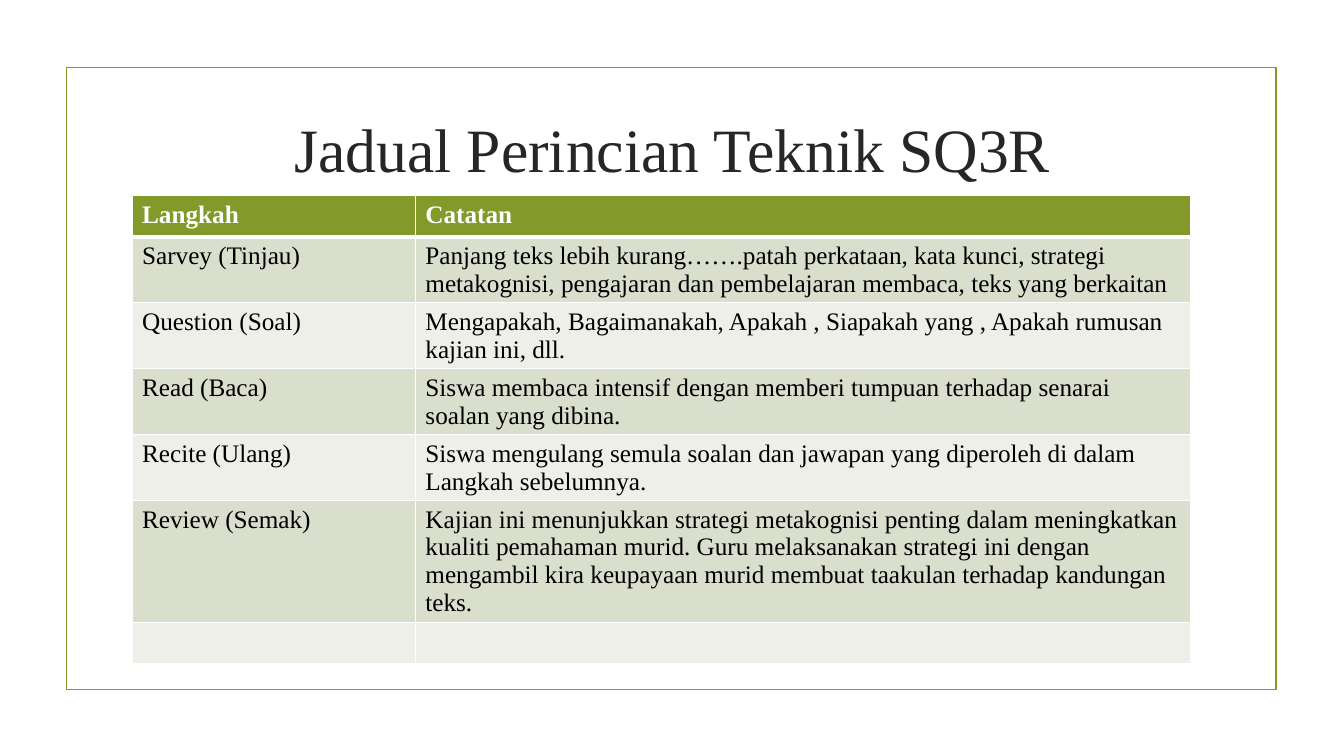
from dataclasses import dataclass

from lxml.etree import SubElement
from pptx import Presentation
from pptx.dml.color import RGBColor
from pptx.enum.shapes import MSO_SHAPE
from pptx.enum.text import MSO_ANCHOR, PP_ALIGN
from pptx.oxml import parse_xml
from pptx.oxml.ns import nsdecls, qn
from pptx.util import Pt


@dataclass(frozen=True)
class Theme:
    """Colours, type sizes and line widths of the slide."""

    font: str = "Times New Roman"
    green: str = "83992A"
    white: str = "FFFFFF"
    ink: str = "000000"
    head: str = "262626"
    bands: tuple = ("D9DECD", "EDEFE8")
    big: int = 44
    body: int = 18
    edge: float = 1.25
    thin: int = 1
    thick: int = 3


THEME = Theme()
SCALE = 9144
COLS = (281, 769)
ROW = 41
STEPS = (
    ("Langkah", "Catatan"),
    ("Sarvey (Tinjau)",
     "Panjang teks lebih kurang…….patah perkataan, kata kunci, strategi "
     "metakognisi, pengajaran dan pembelajaran membaca, teks yang berkaitan"),
    ("Question (Soal)",
     "Mengapakah, Bagaimanakah, Apakah , Siapakah yang , Apakah rumusan "
     "kajian ini, dll."),
    ("Read (Baca)",
     "Siswa membaca intensif dengan memberi tumpuan terhadap senarai "
     "soalan yang dibina."),
    ("Recite (Ulang)",
     "Siswa mengulang semula soalan dan jawapan yang diperoleh di dalam "
     "Langkah sebelumnya."),
    ("Review (Semak)",
     "Kajian ini menunjukkan strategi metakognisi penting dalam meningkatkan "
     "kualiti pemahaman murid. Guru melaksanakan strategi ini dengan "
     "mengambil kira keupayaan murid membuat taakulan terhadap kandungan "
     "teks."),
    ("", ""),
)


def px(*sizes):
    """Turn px lengths into EMU."""
    return [size * SCALE for size in sizes]


def add_run(para, text, size, color, bold=False):
    """Add one formatted run to a paragraph."""
    run = para.add_run()
    run.text = text
    font = run.font
    font.name, font.size, font.bold = THEME.font, Pt(size), bold
    font.color.rgb = RGBColor.from_string(color)


def add_frame(slide, *box):
    """Draw the outlined frame around the content."""
    frame = slide.shapes.add_shape(MSO_SHAPE.RECTANGLE, *px(*box))
    frame.shadow.inherit = False
    frame.fill.background()
    frame.line.color.rgb = RGBColor.from_string(THEME.green)
    frame.line.width = Pt(THEME.edge)


def set_title(slide, text, *box):
    """Place and fill the title placeholder."""
    title = slide.shapes.title
    title.left, title.top, title.width, title.height = px(*box)
    title.text_frame.vertical_anchor = MSO_ANCHOR.MIDDLE
    para = title.text_frame.paragraphs[0]
    para.alignment = PP_ALIGN.CENTER
    add_run(para, text, THEME.big, THEME.head)


def set_edges(cell, top, bottom):
    """Give a cell white borders with its own top and bottom widths."""
    props = cell._tc.get_or_add_tcPr()
    widths = {"lnL": THEME.thin, "lnR": THEME.thin, "lnT": top, "lnB": bottom}
    for spot, (side, width) in enumerate(widths.items()):
        line = parse_xml(f'<a:{side} {nsdecls("a")} w="{Pt(width)}"/>')
        fill = SubElement(line, qn("a:solidFill"))
        SubElement(fill, qn("a:srgbClr"), val=THEME.white)
        props.insert(spot, line)


def set_cell(cell, text, row):
    """Fill, border and write one table cell."""
    first = row == 0
    band = THEME.green if first else THEME.bands[(row - 1) % 2]
    cell.fill.solid()
    cell.fill.fore_color.rgb = RGBColor.from_string(band)
    set_edges(cell, THEME.thick if row == 1 else THEME.thin,
              THEME.thick if first else THEME.thin)
    if text:
        color = THEME.white if first else THEME.ink
        add_run(cell.text_frame.paragraphs[0], text, THEME.body, color, first)


def add_grid(slide, left, top):
    """Add the table of reading steps."""
    box = px(left, top, sum(COLS), ROW * len(STEPS))
    table = slide.shapes.add_table(len(STEPS), len(COLS), *box).table
    table.horz_banding = False
    for col, width in zip(table.columns, px(*COLS)):
        col.width = width
    for row, texts in enumerate(STEPS):
        for col, text in enumerate(texts):
            set_cell(table.cell(row, col), text, row)


def main():
    """Build and save the slide."""
    deck = Presentation()
    deck.slide_width, deck.slide_height = px(1333, 750)
    slide = deck.slides.add_slide(deck.slide_layouts[5])
    add_frame(slide, 66, 67, 1200, 617)
    set_title(slide, "Jadual Perincian Teknik SQ3R", 142, 75, 1050, 143)
    add_grid(slide, 131, 194)
    deck.save("out.pptx")


if __name__ == "__main__":
    main()
